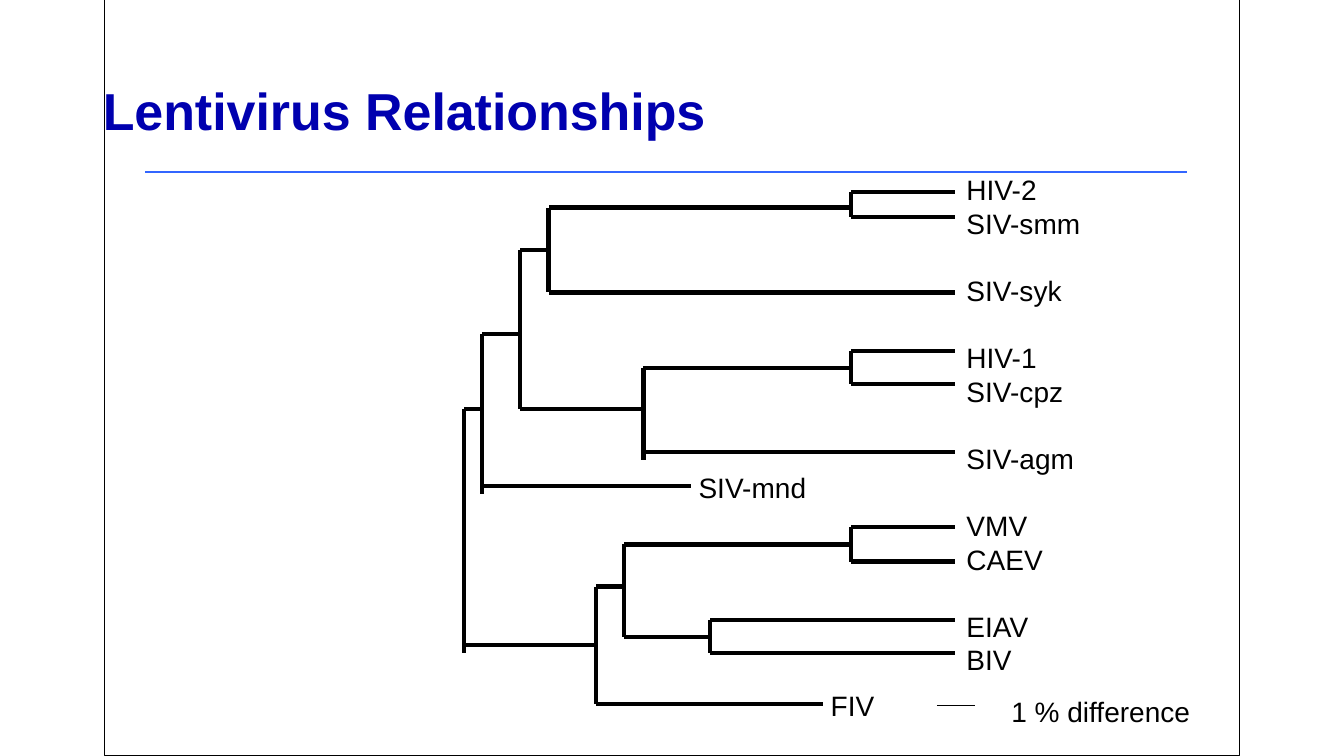
from pptx import Presentation
from pptx.dml.color import RGBColor
from pptx.enum.shapes import MSO_CONNECTOR, MSO_SHAPE
from pptx.enum.text import MSO_ANCHOR
from pptx.oxml.ns import qn
from pptx.util import Cm, Pt
from lxml import etree

STRAIGHT = MSO_CONNECTOR.STRAIGHT
RECT = MSO_SHAPE.RECTANGLE
TOP, MIDDLE = MSO_ANCHOR.TOP, MSO_ANCHOR.MIDDLE

THEME = {
    "font": "Arial",
    "ink": RGBColor(0x00, 0x00, 0x00),
    "paper": RGBColor(0xFF, 0xFF, 0xFF),
    "title": RGBColor(0x00, 0x00, 0xAF),
    "rule": RGBColor(0x33, 0x66, 0xFF),
    "title_size": 37.1,
    "label_size": 20,
    "label_pitch": 24,
    "branch": 3,
    "rule_width": 1.5,
    "thin": 0.75,
}

TITLE = "Lentivirus Relationships"
SCALE = "1 % difference"

# Each group of names is set off from the next by one empty line.
GROUPS = [
    ["HIV-2", "SIV-smm"],
    ["SIV-syk"],
    ["HIV-1", "SIV-cpz"],
    ["SIV-agm"],
    ["VMV", "CAEV"],
    ["EIAV", "BIV"],
]

# Names at shorter branches: text, left, top, width
SHORT = [("SIV-mnd", 17.35, 11.72, 3.28), ("FIV", 20.68, 17.23, 1.68)]

# Clades in cm: stem x, stem overrun, branches as (end x, y) from top down
TIP = 24.05
CLADES = [
    (21.44, 0, [(TIP, 4.83), (TIP, 5.46)]),
    (21.44, 0, [(TIP, 8.84), (TIP, 9.68)]),
    (21.44, 0, [(TIP, 13.28), (TIP, 14.15)]),
    (17.88, 0, [(TIP, 15.62), (TIP, 16.46)]),
    (13.82, 0, [(21.44, 5.23), (TIP, 7.37)]),
    (16.21, 0.2, [(21.44, 9.27), (TIP, 11.38)]),
    (13.11, 0, [(13.82, 6.3), (16.21, 10.31)]),
    (12.14, 0.2, [(13.11, 8.41), (17.4, 12.24)]),
    (15.72, 0, [(21.44, 13.72), (17.88, 16.05)]),
    (15.01, 0, [(15.72, 14.78), (20.73, 17.73)]),
    (11.68, 0.2, [(12.14, 10.31), (15.01, 16.26)]),
]


def draw_line(shapes, x1, y1, x2, y2, width, color):
    line = shapes.add_connector(STRAIGHT, Cm(x1), Cm(y1), Cm(x2), Cm(y2))
    line.line.width = Pt(width)
    line.line.color.rgb = color
    etree.SubElement(line._element.spPr, qn("a:effectLst"))


def add_text(shapes, box, groups, size, color, bold=False, pitch=None,
             anchor=TOP, wrap=False):
    """Add one paragraph per name, with a line's gap between groups."""
    frame = shapes.add_textbox(*map(Cm, box)).text_frame
    frame.word_wrap = wrap
    frame.vertical_anchor = anchor
    first = True
    for group in groups:
        for rank, name in enumerate(group):
            para = frame.paragraphs[0] if first else frame.add_paragraph()
            if pitch:
                para.line_spacing = pitch
            if rank == 0 and not first:
                para.space_before = pitch
            first = False
            run = para.add_run()
            run.text = name
            run.font.name = THEME["font"]
            run.font.size = Pt(size)
            run.font.bold = bold
            run.font.color.rgb = color


def draw_tree(shapes):
    ink, width = THEME["ink"], THEME["branch"]
    for x, extra, twigs in CLADES:
        for end, y in twigs:
            draw_line(shapes, end, y, x, y, width, ink)
        draw_line(shapes, x, twigs[0][1], x, twigs[-1][1] + extra, width, ink)


def main():
    deck = Presentation()
    deck.slide_width, deck.slide_height = Cm(33.86), Cm(19.05)
    shapes = deck.slides.add_slide(deck.slide_layouts[6]).shapes
    ink, size = THEME["ink"], THEME["label_size"]
    pitch = Pt(THEME["label_pitch"])

    page = shapes.add_shape(RECT, Cm(2.64), 0, Cm(28.58), Cm(19.05))
    page.shadow.inherit = False
    page.fill.solid()
    page.fill.fore_color.rgb = THEME["paper"]
    page.line.color.rgb = ink
    page.line.width = Pt(THEME["thin"])

    add_text(shapes, (2.34, 1.02, 29.2, 3.68), [[TITLE]], THEME["title_size"],
             THEME["title"], bold=True, pitch=0.9, anchor=MIDDLE, wrap=True)
    add_text(shapes, (24.1, 4.22, 3.48, 13.1), GROUPS, size, ink, pitch=pitch)
    for name, left, top, width in SHORT:
        add_text(shapes, (left, top, width, 1.12), [[name]], size, ink,
                 pitch=pitch)
    draw_tree(shapes)

    draw_line(shapes, 23.6, 17.78, 24.56, 17.78, THEME["thin"], ink)
    add_text(shapes, (25.23, 17.37, 5.05, 1.12), [[SCALE]], size, ink,
             pitch=pitch)
    draw_line(shapes, 3.66, 4.34, 29.9, 4.34, THEME["rule_width"],
              THEME["rule"])
    deck.save("out.pptx")


if __name__ == "__main__":
    main()
